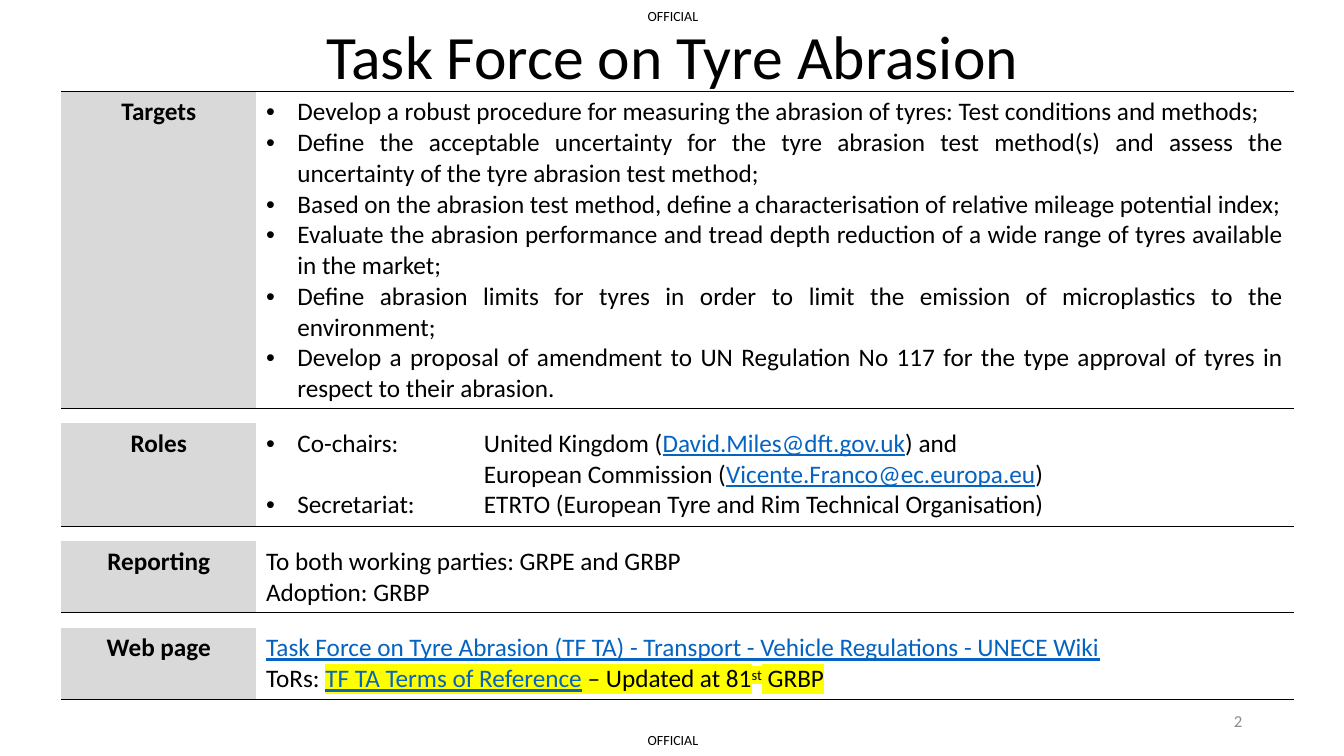
from dataclasses import dataclass

from lxml import etree
from pptx import Presentation
from pptx.dml.color import RGBColor
from pptx.enum import text
from pptx.oxml import ns
from pptx.util import Inches, Pt


@dataclass(frozen=True)
class Theme:
    font: str = "Calibri"
    ink: str = "000000"
    link: str = "0563C1"
    label_fill: str = "D9D9D9"
    muted: str = "8C8C8C"
    highlight: str = "FFFF00"
    title: int = 44
    body: int = 18
    number: int = 12
    marking: int = 10
    gap: int = 2


THEME = Theme()
ALIGN = text.PP_ALIGN
BULLET_INDENT = 0.31
ROLE_INDENT = 2.16
TARGETS = [
    "Develop a robust procedure for measuring the abrasion of tyres: Test conditions and methods;",
    "Define the acceptable uncertainty for the tyre abrasion test method(s) and assess the "
    "uncertainty of the tyre abrasion test method;",
    "Based on the abrasion test method, define a characterisation of relative mileage potential index;",
    "Evaluate the abrasion performance and tread depth reduction of a wide range of tyres available "
    "in the market;",
    "Define abrasion limits for tyres in order to limit the emission of microplastics to the environment;",
    "Develop a proposal of amendment to UN Regulation No 117 for the type approval of tyres in "
    "respect to their abrasion.",
]

# A paragraph is a list of (text, styles) runs; styles are l = link, h = highlight, s = superscript.
ROLES = [
    [("Co-chairs:\tUnited Kingdom (", ""), ("David.Miles@dft.gov.uk", "l"), (") and", "")],
    [("European Commission (", ""), ("Vicente.Franco@ec.europa.eu", "l"), (")", "")],
    [("Secretariat:\tETRTO (European Tyre and Rim Technical Organisation)", "")],
]
REPORTING = [
    [("To both working parties: GRPE and GRBP", "")],
    [("Adoption: GRBP", "")],
]
WEB_PAGE = [
    [("Task Force on Tyre Abrasion (TF TA) - Transport - Vehicle Regulations - UNECE Wiki", "l")],
    [("ToRs: ", ""), ("TF TA Terms of Reference", "lh"), (" – Updated at 81", "h"),
     ("st", "hs"), (" GRBP", "h")],
]


def color(value):
    return RGBColor.from_string(value)


def add_child(parent, tag, **attributes):
    return etree.SubElement(parent, ns.qn(tag), attributes)


def format_paragraph(paragraph, size, align=ALIGN.LEFT, ink=THEME.ink, bold=False):
    paragraph.alignment = align
    font = paragraph.font
    font.name, font.size, font.bold = THEME.font, Pt(size), bold
    font.color.rgb = color(ink)


def add_runs(paragraph, runs):
    for words, styles in runs:
        run = paragraph.add_run()
        run.text = words
        properties = run.font._element
        if "l" in styles:
            run.font.color.rgb = color(THEME.link)
            run.font.underline = True
        if "h" in styles:
            highlight = add_child(properties, "a:highlight")
            add_child(highlight, "a:srgbClr", val=THEME.highlight)
        if "s" in styles:
            properties.set("baseline", "30000")


def indent(paragraph, left, bullet=False, tab=None):
    properties = paragraph._p.get_or_add_pPr()
    properties.set("marL", str(Inches(left)))
    properties.set("indent", str(-Inches(left) if bullet else 0))
    details = []
    if bullet:
        details += [add_child(properties, "a:buFont", typeface="Arial"),
                    add_child(properties, "a:buChar", char="•")]
    if tab:
        stops = add_child(properties, "a:tabLst")
        add_child(stops, "a:tab", pos=str(Inches(tab)), algn="l")
        details.append(stops)
    for position, detail in enumerate(details):
        properties.insert(position, detail)


def fill_cell(cell, paragraphs, align=ALIGN.LEFT, bold=False):
    frame = cell.text_frame
    for number, runs in enumerate(paragraphs):
        paragraph = frame.add_paragraph() if number else frame.paragraphs[0]
        format_paragraph(paragraph, THEME.body, align, bold=bold)
        add_runs(paragraph, runs)
    return frame.paragraphs


def set_borders(cell, sides):
    properties = cell._tc.get_or_add_tcPr()
    for position, side in enumerate(("L", "R", "T", "B")):
        visible = side in sides
        line = add_child(properties, f"a:ln{side}", w=str(Pt(1) if visible else 0))
        if visible:
            fill = add_child(line, "a:solidFill")
            add_child(fill, "a:srgbClr", val=THEME.ink)
        else:
            add_child(line, "a:noFill")
        properties.insert(position, line)


def format_gap(cell):
    """Keep an empty row as low as its set height."""
    cell.margin_top = cell.margin_bottom = 0
    paragraph = cell.text_frame.paragraphs[0]
    add_child(paragraph._p, "a:endParaRPr", sz=str(THEME.gap * 100))


def add_overview(slide, left, top, width):
    sections = [("Targets", [[(target, "")] for target in TARGETS], 3.14),
                ("Roles", ROLES, 1.02),
                ("Reporting", REPORTING, 0.71),
                ("Web page", WEB_PAGE, 0.71)]
    gap, label_width = 0.15, 1.93
    heights = [height for *_, height in sections for height in (height, gap)][:-1]
    table = slide.shapes.add_table(len(heights), 2, Inches(left), Inches(top),
                                   Inches(width), Inches(sum(heights))).table
    table.first_row = table.horz_banding = False
    table.columns[0].width = Inches(label_width)
    table.columns[1].width = Inches(width - label_width)
    for index, height in enumerate(heights):
        row = table.rows[index]
        row.height = Inches(height)
        label, content = row.cells
        for cell in (label, content):
            cell.fill.background()
            if index % 2:
                format_gap(cell)
            set_borders(cell, "" if index % 2 else "B" if index else "TB")
        if index % 2:
            continue
        name, paragraphs, _ = sections[index // 2]
        label.fill.solid()
        label.fill.fore_color.rgb = color(THEME.label_fill)
        fill_cell(label, [[(name, "")]], ALIGN.CENTER, bold=True)
        align = ALIGN.JUSTIFY if name == "Targets" else ALIGN.LEFT
        lines = fill_cell(content, paragraphs, align)
        if name == "Targets":
            for line in lines:
                indent(line, BULLET_INDENT, bullet=True)
        elif name == "Roles":
            for line in lines:
                if "\t" in line.text:
                    indent(line, BULLET_INDENT, bullet=True, tab=ROLE_INDENT)
                else:
                    indent(line, ROLE_INDENT)


def add_title(slide, left, top, width, height):
    title = slide.shapes.title
    title.left, title.top, title.width, title.height = map(Inches, (left, top, width, height))
    frame = title.text_frame
    frame.text = "Task Force on Tyre Abrasion"
    frame.auto_size = text.MSO_AUTO_SIZE.NONE
    frame.vertical_anchor = text.MSO_ANCHOR.MIDDLE
    format_paragraph(frame.paragraphs[0], THEME.title, ALIGN.CENTER)
    frame.paragraphs[0].line_spacing = 0.9


def add_label(slide, words, box, size, align, ink=THEME.ink, margin=0.0):
    frame = slide.shapes.add_textbox(*map(Inches, box)).text_frame
    frame.margin_left = frame.margin_right = Inches(margin)
    frame.margin_top = frame.margin_bottom = 0
    frame.vertical_anchor = text.MSO_ANCHOR.MIDDLE
    frame.text = words
    format_paragraph(frame.paragraphs[0], size, align, ink)


def main():
    presentation = Presentation()
    presentation.slide_width, presentation.slide_height = Inches(13.33), Inches(7.5)
    slide = presentation.slides.add_slide(presentation.slide_layouts[5])
    for top in (0.07, 7.26):
        add_label(slide, "OFFICIAL", (6.41, top, 0.53, 0.17), THEME.marking, ALIGN.CENTER)
    add_title(slide, 0.92, 0.09, 11.5, 1.01)
    add_overview(slide, 0.61, 0.91, 12.22)
    add_label(slide, "2", (9.42, 6.95, 3, 0.4), THEME.number, ALIGN.RIGHT, THEME.muted, margin=0.1)
    presentation.save("out.pptx")


if __name__ == "__main__":
    main()
